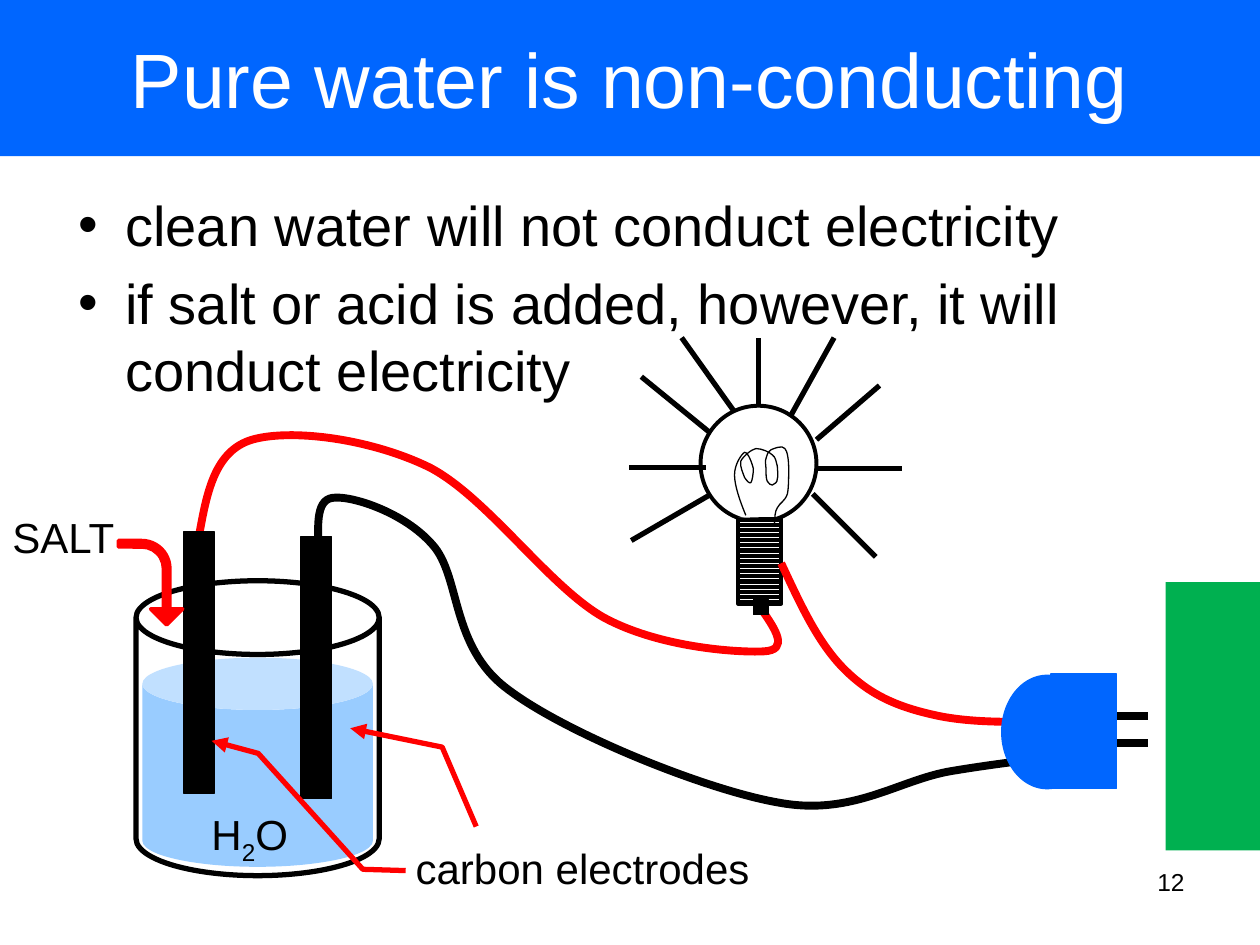
from lxml.etree import SubElement
from pptx import Presentation
from pptx.dml.color import RGBColor
from pptx.enum.dml import MSO_PATTERN as PATTERN
from pptx.enum.shapes import MSO_CONNECTOR as CONNECTOR, MSO_SHAPE as SHAPE
from pptx.enum.text import MSO_ANCHOR as ANCHOR, MSO_AUTO_SIZE as AUTO, PP_ALIGN as ALIGN
from pptx.oxml.ns import qn
from pptx.util import Emu, Pt

PX = 9144
BLACK, WHITE, RED, BLUE = "000000", "FFFFFF", "FF0000", "0066FF"
WATER, GREEN = "99CCFF", "00B050"


def px(n):
    return Emu(n * PX)


def rgb(color):
    return RGBColor.from_string(color)


def set_line(sp, color, width):
    if color is None:
        sp.line.fill.background()
    else:
        sp.line.color.rgb = rgb(color)
        sp.line.width = Pt(width)


def set_fill(sp, color):
    if color is None:
        sp.fill.background()
    else:
        sp.fill.solid()
        sp.fill.fore_color.rgb = rgb(color)


def set_font(p, size, color=BLACK):
    for r in p.runs:
        r.font.name = "Arial"
        r.font.size = Pt(size)
        r.font.color.rgb = rgb(color)


def add_preset(shapes, kind, x, y, w, h, fill=None, line=None, width=0.75, adj=()):
    sp = shapes.add_shape(kind, px(x), px(y), px(w), px(h))
    sp.shadow.inherit = False
    set_fill(sp, fill)
    set_line(sp, line, width)
    for i, value in enumerate(adj):
        sp.adjustments[i] = value
    return sp


def add_path(shapes, x, y, points, line, width, arrow=False):
    (x0, y0), *rest = [(px(x + a), px(y + b)) for a, b in points]
    builder = shapes.build_freeform(x0, y0)
    builder.add_line_segments(rest, close=False)
    sp = builder.convert_to_shape()
    sp.shadow.inherit = False
    set_fill(sp, None)
    set_line(sp, line, width)
    if arrow:
        SubElement(sp._element.spPr.find(qn("a:ln")), qn("a:tailEnd"), type="triangle")
    return sp


def add_curve(shapes, x, y, start, segments, line, width):
    points = [start]
    for seg in segments:
        points += zip(seg[::2], seg[1::2])
    sp = add_path(shapes, x, y, points, line, width)
    outline = next(sp._element.iter(qn("a:path")))
    steps = outline.findall(qn("a:lnTo"))
    for i in range(0, len(steps), 3):
        cubic = SubElement(outline, qn("a:cubicBezTo"))
        for step in steps[i:i + 3]:
            cubic.append(step[0])
            outline.remove(step)


def add_line(shapes, x, y, ends, width):
    x1, y1, x2, y2 = ends
    line = shapes.add_connector(CONNECTOR.STRAIGHT, px(x + x1), px(y + y1), px(x + x2), px(y + y2))
    set_line(line, BLACK, width)
    SubElement(line._element.spPr, qn("a:effectLst"))


def add_label(shapes, x, y, w, h, text):
    tf = shapes.add_textbox(px(x), px(y), px(w), px(h)).text_frame
    tf.word_wrap = False
    tf.auto_size = AUTO.SHAPE_TO_FIT_TEXT
    p = tf.paragraphs[0]
    p.text = text
    set_font(p, 24)
    return p


def move(sp, x, y, w, h):
    sp.left, sp.top, sp.width, sp.height = px(x), px(y), px(w), px(h)


def add_title(s, x, y, w, h):
    sp = s.shapes.title
    move(sp, x, y, w, h)
    set_fill(sp, BLUE)
    tf = sp.text_frame
    tf.text = "Pure water is non-conducting"
    tf.auto_size = AUTO.NONE
    tf.vertical_anchor = ANCHOR.MIDDLE
    set_font(tf.paragraphs[0], 44, WHITE)


def add_body(s, x, y, w, h):
    sp = s.placeholders[1]
    move(sp, x, y, w, h)
    tf = sp.text_frame
    tf.text = ("clean water will not conduct electricity\n"
               "if salt or acid is added, however, it will conduct electricity")
    tf.auto_size = AUTO.NONE
    for p in tf.paragraphs:
        set_font(p, 32)


def add_page_number(s, x, y, w, h):
    tf = s.shapes.add_textbox(px(x), px(y), px(w), px(h)).text_frame
    tf.word_wrap = True
    p = tf.paragraphs[0]
    p.text = "12"
    p.alignment = ALIGN.RIGHT
    set_font(p, 14)


def add_beaker(s, x, y):
    add_preset(s.shapes, SHAPE.CAN, x + 5, y + 100, 183, 166, WATER, adj=[0.25])
    for dx, dy in ((131, 4), (38, 0)):
        add_preset(s.shapes, SHAPE.RECTANGLE, x + dx, y + dy, 24, 208, BLACK, BLACK)
    add_preset(s.shapes, SHAPE.CAN, x, y + 39, 193, 234, None, BLACK, 3, [0.303])
    p = add_label(s.shapes, x + 50, y + 215, 82, 50, "H")
    for text in ("2", "O"):
        p.add_run().text = text
    set_font(p, 24)
    p.runs[1]._r.get_or_add_rPr().set("baseline", "-25000")


def add_lamp(s, x, y):
    bulb = s.shapes.add_group_shape().shapes
    add_preset(bulb, SHAPE.OVAL, x + 57, y + 54, 92, 92, WHITE, BLACK, 2.25)
    socket = add_path(bulb, x, y, [(87, 143), (87, 211), (121, 211), (121, 142)], BLACK, 2.25)
    socket.fill.patterned()
    socket.fill.pattern = PATTERN.DARK_HORIZONTAL
    socket.fill.fore_color.rgb = rgb(BLACK)
    socket.fill.back_color.rgb = rgb(WHITE)
    add_preset(bulb, SHAPE.RECTANGLE, x + 99, y + 208, 12, 12, BLACK, BLACK)
    add_curve(bulb, x + 84, y + 85, (9, 56), [
        (4, 44, 0, 32, 0, 24), (0, 15, 6, 7, 8, 6), (11, 6, 14, 15, 15, 19),
        (15, 23, 14, 29, 13, 30), (12, 31, 10, 29, 8, 26), (7, 23, 4, 17, 5, 13),
        (7, 9, 13, 4, 17, 3), (22, 3, 28, 6, 30, 8), (33, 10, 33, 14, 34, 17),
        (34, 20, 35, 25, 34, 27), (34, 30, 32, 31, 30, 32), (29, 32, 27, 31, 26, 29),
        (25, 27, 25, 22, 25, 19), (25, 16, 24, 13, 25, 11), (26, 8, 26, 6, 29, 4),
        (31, 3, 38, 0, 40, 3), (42, 5, 43, 12, 43, 19), (43, 25, 43, 34, 42, 39),
        (40, 45, 36, 46, 34, 50), (32, 53, 32, 58, 32, 61), (31, 64, 31, 65, 31, 65)],
        BLACK, 0.75)
    rays = s.shapes.add_group_shape().shapes
    for ends in ((146, 124, 196, 174), (149, 104, 217, 104), (149, 81, 199, 38),
                 (128, 63, 163, 0), (103, 54, 103, 0), (84, 59, 42, 0),
                 (61, 103, 0, 103), (64, 125, 2, 161), (64, 75, 10, 31)):
        add_line(rays, x, y, ends, 3)


def add_lamp_wire(s, x, y):
    add_curve(s.shapes, x, y, (446, 143), [
        (457, 159, 469, 176, 448, 177), (427, 178, 365, 174, 321, 150),
        (277, 125, 229, 55, 183, 31), (136, 8, 73, 0, 42, 9), (12, 18, 6, 52, 0, 85)],
        RED, 4.5)


def add_plug_wires(s, x, y):
    add_curve(s.shapes, x + 369, y + 53, (248, 124), [
        (202, 126, 157, 128, 124, 121), (91, 114, 70, 104, 50, 84), (29, 63, 15, 32, 0, 0)],
        RED, 4.5)
    add_curve(s.shapes, x, y, (2, 42), [
        (1, 21, 0, 1, 15, 1), (30, 0, 70, 13, 92, 38), (115, 63, 106, 119, 152, 153),
        (198, 188, 309, 233, 367, 243), (426, 254, 462, 225, 504, 218),
        (546, 211, 584, 207, 622, 203)], BLACK, 4.5)


def add_plug(s, x, y):
    plug = s.shapes.add_group_shape().shapes
    for dy in (33, 55):
        add_line(plug, x, y, (77, dy, 116, dy), 4.5)
    add_preset(plug, SHAPE.OVAL, x, y + 1, 72, 90, BLUE, BLUE)
    add_preset(plug, SHAPE.RECTANGLE, x + 39, y, 52, 91, BLUE, BLUE)


def add_electrode_callout(s, x, y):
    add_label(s.shapes, x + 152, y + 86, 285, 50, "carbon electrodes")
    for points in ([(210, 78), (183, 15), (110, 0)],
                   [(154, 113), (120, 112), (37, 20), (0, 10)]):
        add_path(s.shapes, x, y, points, RED, 3, arrow=True)


def add_salt(s, x, y):
    arrow = add_preset(s.shapes, SHAPE.BENT_ARROW, x + 86, y + 36, 67, 51, RED, RED, 2,
                       [0.101, 0.25, 0.25, 0.438])
    arrow.rotation = 90
    add_label(s.shapes, x, y, 102, 51, "SALT")


def main():
    prs = Presentation()
    prs.slide_width, prs.slide_height = px(1000), px(750)
    s = prs.slides.add_slide(prs.slide_layouts[1])
    add_title(s, 0, 0, 1000, 124)
    add_body(s, 52, 146, 900, 188)
    add_page_number(s, 717, 683, 233, 52)
    add_lamp_wire(s, 158, 340)
    add_beaker(s, 108, 422)
    add_lamp(s, 499, 268)
    add_plug_wires(s, 251, 394)
    add_plug(s, 795, 535)
    add_electrode_callout(s, 168, 578)
    add_preset(s.shapes, SHAPE.RECTANGLE, 925, 462, 75, 213, GREEN)
    add_salt(s, 0, 401)
    prs.save("out.pptx")


if __name__ == "__main__":
    main()
